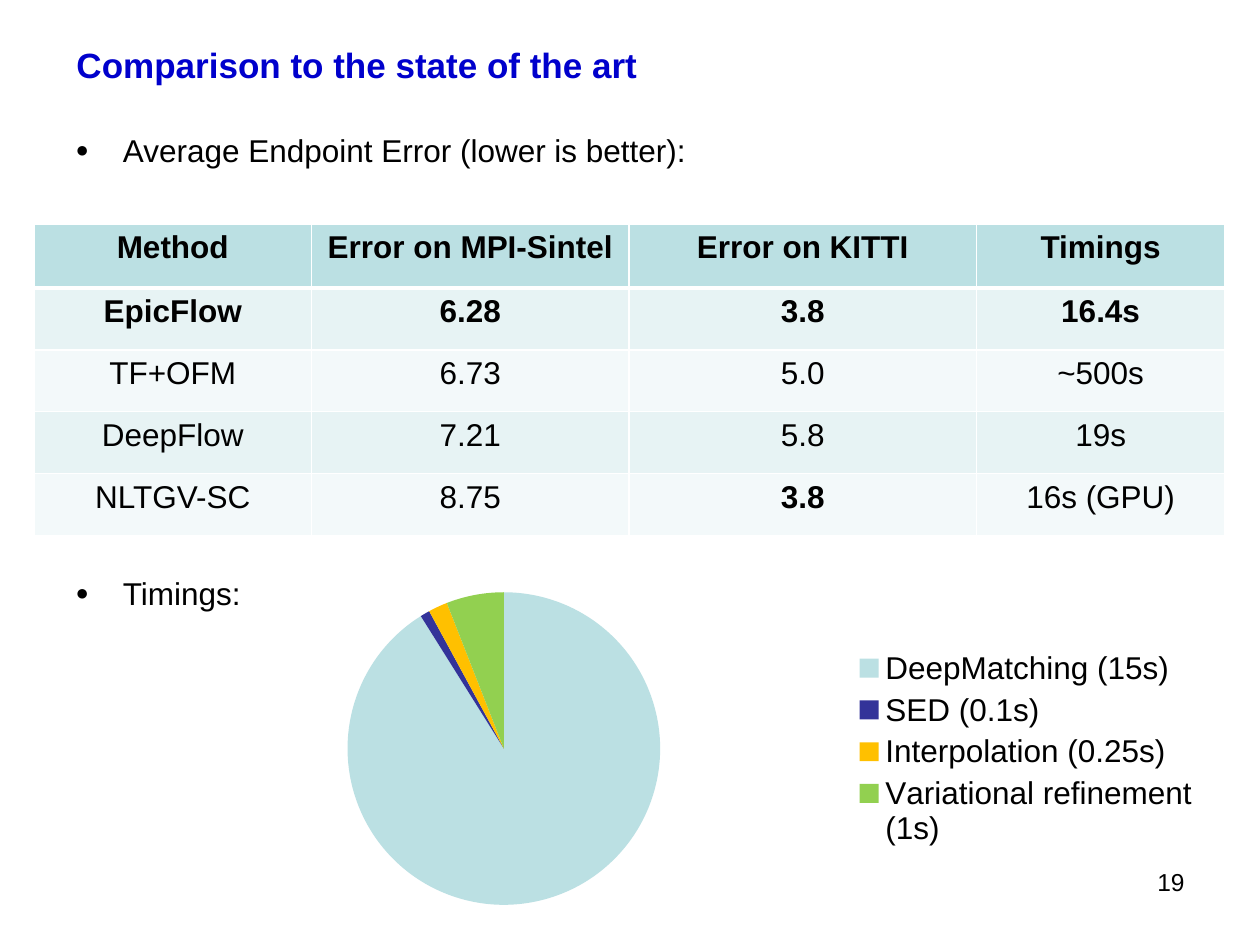
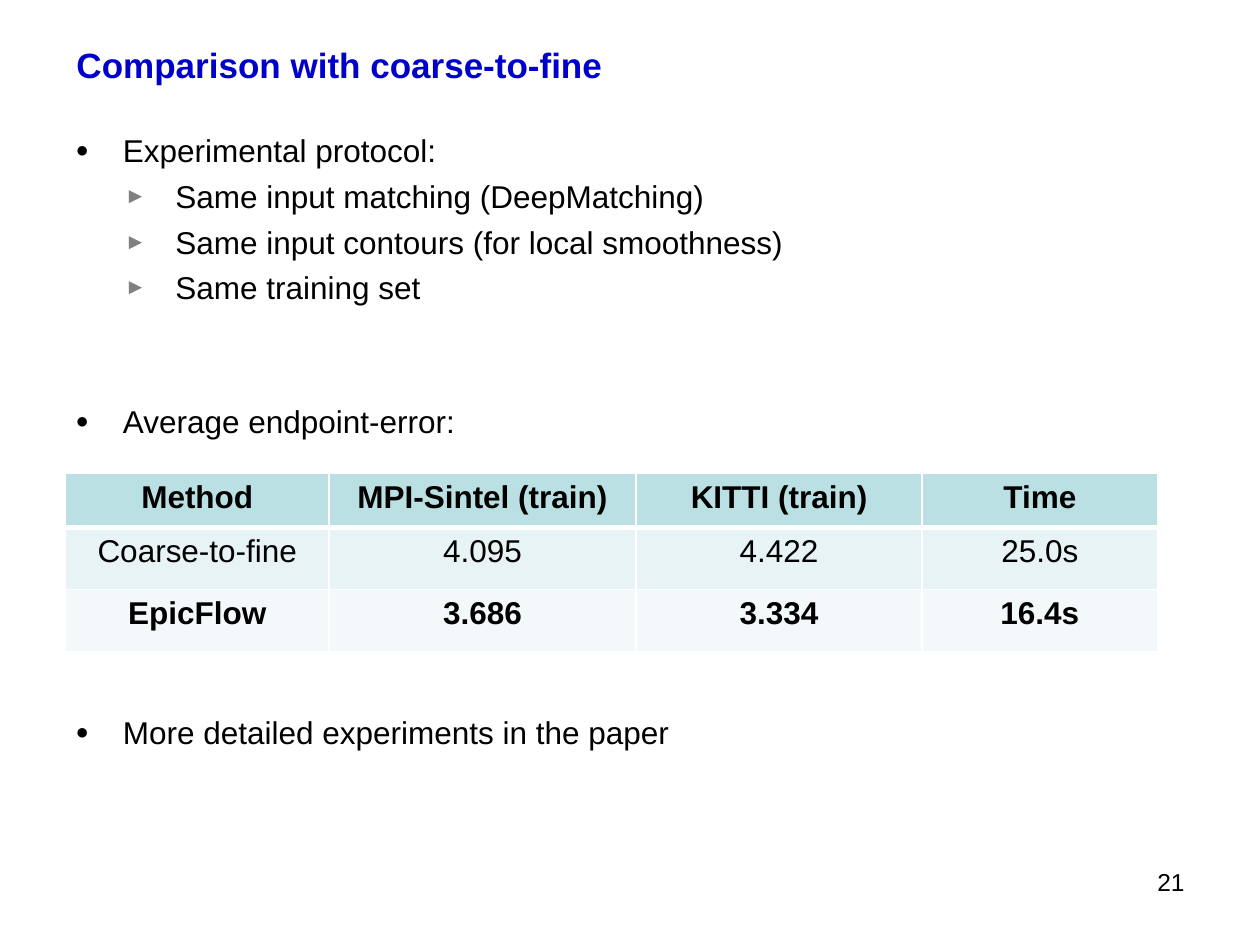
import pptx
import pptx.chart.data
import pptx.dml.color
import pptx.enum.chart
import pptx.enum.text
import pptx.oxml
import pptx.oxml.ns
import pptx.util

Pt = pptx.util.Pt
ALIGN = pptx.enum.text.PP_ALIGN
ANCHOR = pptx.enum.text.MSO_ANCHOR

COLORS = {
    "title": "0000CC",
    "text": "000000",
    "arrow": "808080",
    "header": "BBE0E3",
    "band_dark": "E7F3F4",
    "band_light": "F3F9FA",
    "border": "FFFFFF",
    "navy": "333399",
    "amber": "FFC000",
    "green": "92D050",
}
FONT = "Arial"
BODY_SIZE = 18
SPACE_BEFORE = 4.5
LINE_PITCH = 25.2
BULLETS = [("●", "text", 27, -27), ("►", "arrow", 57, -29)]


def rgb(name):
    return pptx.dml.color.RGBColor.from_string(COLORS[name])


def add_xml(parent, xml):
    namespace = pptx.oxml.ns.nsdecls("a")
    parent.append(pptx.oxml.parse_xml(xml.replace(" ", f" {namespace} ", 1)))


class Deck:
    def __init__(self):
        self.presentation = pptx.Presentation()
        self.presentation.slide_width = Pt(720)
        self.presentation.slide_height = Pt(540)
        self.slide = None

    def style(self, font, size=BODY_SIZE, color="text", bold=False):
        font.name = FONT
        font.size = Pt(size)
        font.bold = bold
        font.color.rgb = rgb(color)

    def place(self, shape, left, top, width, height):
        shape.left, shape.top = Pt(left), Pt(top)
        shape.width, shape.height = Pt(width), Pt(height)
        shape.text_frame.word_wrap = True
        shape.text_frame.auto_size = pptx.enum.text.MSO_AUTO_SIZE.NONE

    def start(self, title, number):
        layout = self.presentation.slide_layouts[1]
        self.slide = self.presentation.slides.add_slide(layout)
        shape = self.slide.shapes.title
        self.place(shape, 36.5, 20, 648, 34)
        shape.text_frame.text = title
        shape.text_frame.vertical_anchor = ANCHOR.MIDDLE
        paragraph = shape.text_frame.paragraphs[0]
        paragraph.alignment = ALIGN.LEFT
        self.style(paragraph.runs[0].font, 20, "title", True)
        self.page_number(number)

    def page_number(self, number):
        shape = self.slide.shapes.add_textbox(0, 0, 0, 0)
        self.place(shape, 638, 492, 46, 37)
        shape.text_frame.text = str(number)
        paragraph = shape.text_frame.paragraphs[0]
        paragraph.alignment = ALIGN.RIGHT
        self.style(paragraph.runs[0].font, 14)

    def bullets(self, items):
        shape = self.slide.placeholders[1]
        self.place(shape, 36, 71.5, 647, 459)
        frame = shape.text_frame
        frame.text = "\n".join(text for text, level, skipped_lines in items)
        for index, (text, level, skipped_lines) in enumerate(items):
            paragraph = frame.paragraphs[index]
            paragraph.level = level
            space = SPACE_BEFORE + skipped_lines * LINE_PITCH if index else 0
            paragraph.space_before = Pt(space)
            character, color, margin, indent = BULLETS[level]
            properties = paragraph._p.get_or_add_pPr()
            properties.set("marL", str(Pt(margin)))
            properties.set("indent", str(Pt(indent)))
            add_xml(properties, f'<a:buClr ><a:srgbClr val="{COLORS[color]}"/></a:buClr>')
            add_xml(properties, '<a:buSzPct val="70000"/>')
            add_xml(properties, f'<a:buFont typeface="{FONT}"/>')
            add_xml(properties, f'<a:buChar char="{character}"/>')
            self.style(paragraph.runs[0].font)

    def table(self, left, top, widths, heights, rows, bold_cells):
        frame = self.slide.shapes.add_table(
            len(rows), len(widths), Pt(left), Pt(top), Pt(sum(widths)), Pt(sum(heights)))
        table = frame.table
        table.horz_banding = False
        for column, width in zip(table.columns, widths):
            column.width = Pt(width)
        for row, height in zip(table.rows, heights):
            row.height = Pt(height)
        for row_index, row in enumerate(rows):
            for column_index, text in enumerate(row):
                bold = row_index == 0 or (row_index, column_index) in bold_cells
                self.cell(table.cell(row_index, column_index), text, row_index, bold)

    def cell(self, cell, text, row_index, bold):
        cell.text_frame.text = text
        paragraph = cell.text_frame.paragraphs[0]
        paragraph.alignment = ALIGN.CENTER
        self.style(paragraph.runs[0].font, bold=bold)
        properties = cell._tc.get_or_add_tcPr()
        for side in "LRTB":
            width = 3 if (row_index, side) in ((0, "B"), (1, "T")) else 1
            add_xml(properties, f'<a:ln{side} w="{Pt(width)}"><a:solidFill>'
                    f'<a:srgbClr val="{COLORS["border"]}"/></a:solidFill></a:ln{side}>')
        band = "band_dark" if row_index % 2 else "band_light"
        cell.fill.solid()
        cell.fill.fore_color.rgb = rgb(band if row_index else "header")

    def pie(self, left, top, width, height, slices):
        data = pptx.chart.data.CategoryChartData()
        data.categories = [label for label, value, color in slices]
        data.add_series("Series 1", [value for label, value, color in slices])
        chart = self.slide.shapes.add_chart(
            pptx.enum.chart.XL_CHART_TYPE.PIE,
            Pt(left), Pt(top), Pt(width), Pt(height), data).chart
        chart.has_title = False
        chart.has_legend = True
        chart.legend.position = pptx.enum.chart.XL_LEGEND_POSITION.RIGHT
        chart.legend.include_in_layout = False
        self.style(chart.font)
        plot = chart.plots[0]
        plot.vary_by_categories = True
        for index, (label, value, color) in enumerate(slices):
            point_format = plot.series[0].points[index].format
            point_format.fill.solid()
            point_format.fill.fore_color.rgb = rgb(color)
            point_format.line.fill.background()


def state_of_the_art(deck):
    deck.start("Comparison to the state of the art", 19)
    deck.bullets([
        ("Average Endpoint Error (lower is better):", 0, 0),
        ("Timings:", 0, 9),
    ])
    deck.table(19.5, 128, [158.5, 181.5, 198.5, 142], [36.5] + [35.4] * 4, [
        ["Method", "Error on MPI-Sintel", "Error on KITTI", "Timings"],
        ["EpicFlow", "6.28", "3.8", "16.4s"],
        ["TF+OFM", "6.73", "5.0", "~500s"],
        ["DeepFlow", "7.21", "5.8", "19s"],
        ["NLTGV-SC", "8.75", "3.8", "16s (GPU)"],
    ], {(1, 0), (1, 1), (1, 2), (1, 3), (4, 2)})
    deck.pie(90.5, 328.5, 602.5, 198.5, [
        ("DeepMatching (15s)", 92, "header"),
        ("SED (0.1s)", 1, "navy"),
        ("Interpolation (0.25s)", 2, "amber"),
        ("Variational refinement (1s)", 6, "green"),
    ])


def coarse_to_fine(deck):
    deck.start("Comparison with coarse-to-fine", 21)
    deck.bullets([
        ("Experimental protocol:", 0, 0),
        ("Same input matching (DeepMatching)", 1, 0),
        ("Same input contours (for local smoothness)", 1, 0),
        ("Same training set", 1, 0),
        ("Average endpoint-error:", 0, 2),
        ("More detailed experiments in the paper", 0, 6),
    ])
    deck.table(37.5, 270.5, [150.5, 175.5, 163.5, 134.5], [31, 35.4, 35.4], [
        ["Method", "MPI-Sintel (train)", "KITTI (train)", "Time"],
        ["Coarse-to-fine", "4.095", "4.422", "25.0s"],
        ["EpicFlow", "3.686", "3.334", "16.4s"],
    ], {(2, column) for column in range(4)})


def main():
    deck = Deck()
    state_of_the_art(deck)
    coarse_to_fine(deck)
    deck.presentation.save("out.pptx")


if __name__ == "__main__":
    main()
